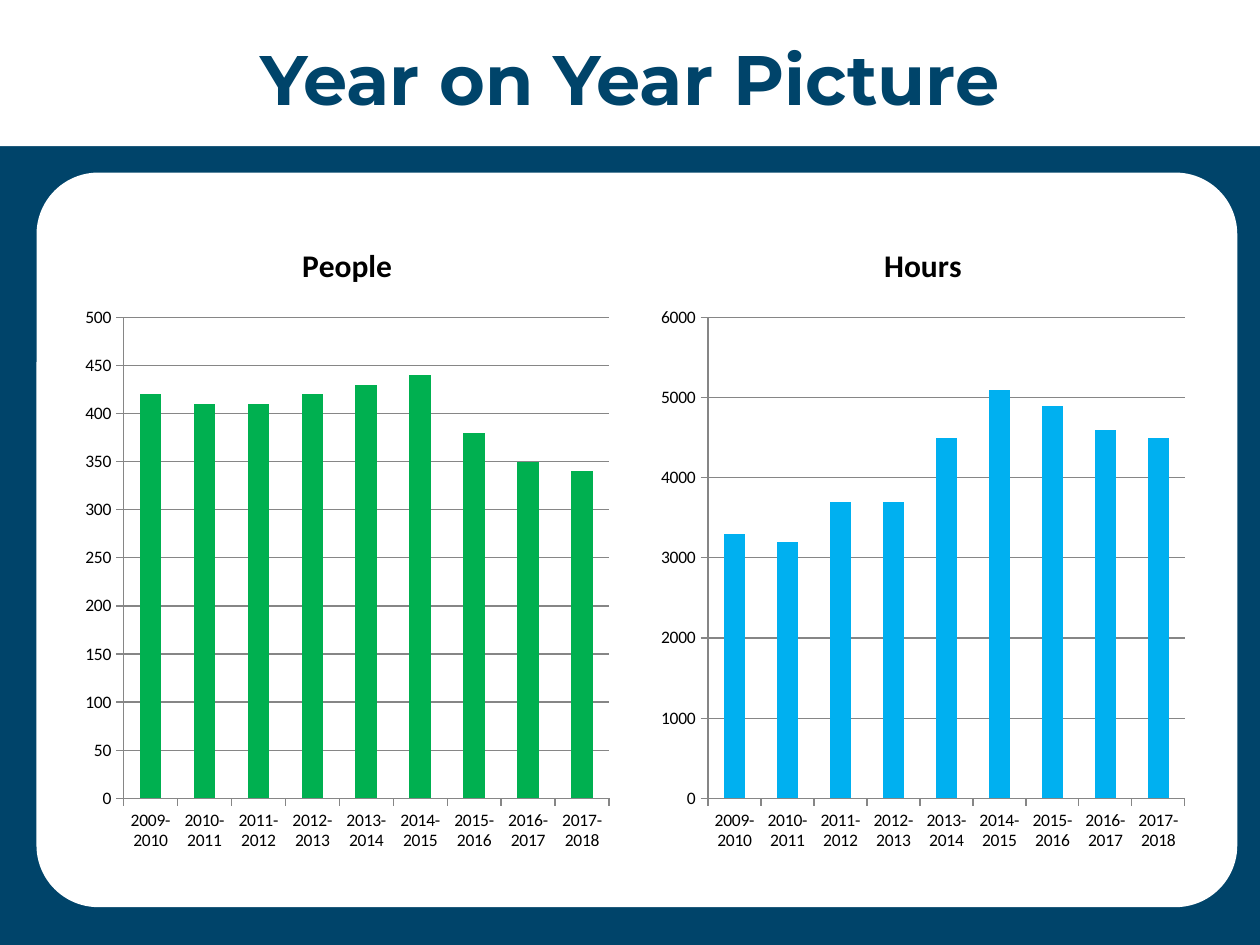
from pptx import Presentation
from pptx.chart.data import CategoryChartData
from pptx.dml.color import RGBColor
from pptx.enum.chart import XL_CHART_TYPE as CT, XL_TICK_MARK as TM
from pptx.enum.shapes import MSO_SHAPE as MS
from pptx.enum.text import MSO_ANCHOR as MA, PP_ALIGN as PA
from pptx.util import Inches, Pt


def rgb(h):
    return RGBColor.from_string(h)


prs = Presentation()
prs.slide_width, prs.slide_height = Inches(10), Inches(7.5)
s = prs.slides.add_slide(prs.slide_layouts[6])

for kind, x, y, w, h, color in [
    (MS.RECTANGLE, 0, 1.16, 10, 6.34, "00446A"),
    (MS.RECTANGLE, 0, 0, 10, 1.16, "FFFFFF"),
    (MS.ROUNDED_RECTANGLE, 0.29, 1.37, 9.53, 5.83, "FFFFFF"),
]:
    sp = s.shapes.add_shape(kind, Inches(x), Inches(y), Inches(w), Inches(h))
    sp.shadow.inherit = False
    sp.fill.solid()
    sp.fill.fore_color.rgb = rgb(color)
    sp.line.fill.background()
sp.adjustments[0] = 0.084

tf = s.shapes.add_textbox(Inches(0.32), Inches(0.28), Inches(9.36), Inches(0.67)).text_frame
tf.word_wrap = True
tf.margin_left = tf.margin_right = tf.margin_top = tf.margin_bottom = 0
tf.vertical_anchor = MA.TOP
p = tf.paragraphs[0]
p.alignment = PA.CENTER
r = p.add_run()
r.text = "Year on Year Picture"
r.font.name, r.font.size, r.font.bold = "Montserrat", Pt(40), True
r.font.color.rgb = rgb("00446A")

years = [f"{y}-{y + 1}" for y in range(2009, 2018)]
for title, x, color, vals, top, step in [
    ("Hours", 5.16, "00B0F0", [3300, 3200, 3700, 3700, 4500, 5100, 4900, 4600, 4500], 6000, 1000),
    ("People", 0.59, "00B050", [420, 410, 410, 420, 430, 440, 380, 350, 340], 500, 50),
]:
    data = CategoryChartData()
    data.categories = years
    data.add_series("Series 1", vals)
    chart = s.shapes.add_chart(CT.COLUMN_CLUSTERED, Inches(x), Inches(1.73),
                               Inches(4.33), Inches(5.12), data).chart
    chart.has_legend = False
    chart.font.name, chart.font.size = "Calibri", Pt(10)
    chart.font.color.rgb = rgb("000000")

    chart.has_title = True
    r = chart.chart_title.text_frame.paragraphs[0].add_run()
    r.text = title
    r.font.name, r.font.size, r.font.bold = "Calibri", Pt(18), True
    r.font.color.rgb = rgb("000000")
    chart.chart_title.include_in_layout = False

    plot = chart.plots[0]
    plot.gap_width = 150
    plot.vary_by_categories = False
    fill = plot.series[0].format.fill
    fill.solid()
    fill.fore_color.rgb = rgb(color)

    val_axis = chart.value_axis
    val_axis.minimum_scale, val_axis.maximum_scale = 0, top
    val_axis.major_unit = step
    val_axis.has_major_gridlines = True
    for axis in (chart.category_axis, val_axis):
        axis.major_tick_mark, axis.minor_tick_mark = TM.OUTSIDE, TM.NONE
    for part in (chart.category_axis, val_axis, val_axis.major_gridlines):
        part.format.line.color.rgb = rgb("868686")
        part.format.line.width = Pt(0.75)

prs.save("out.pptx")
